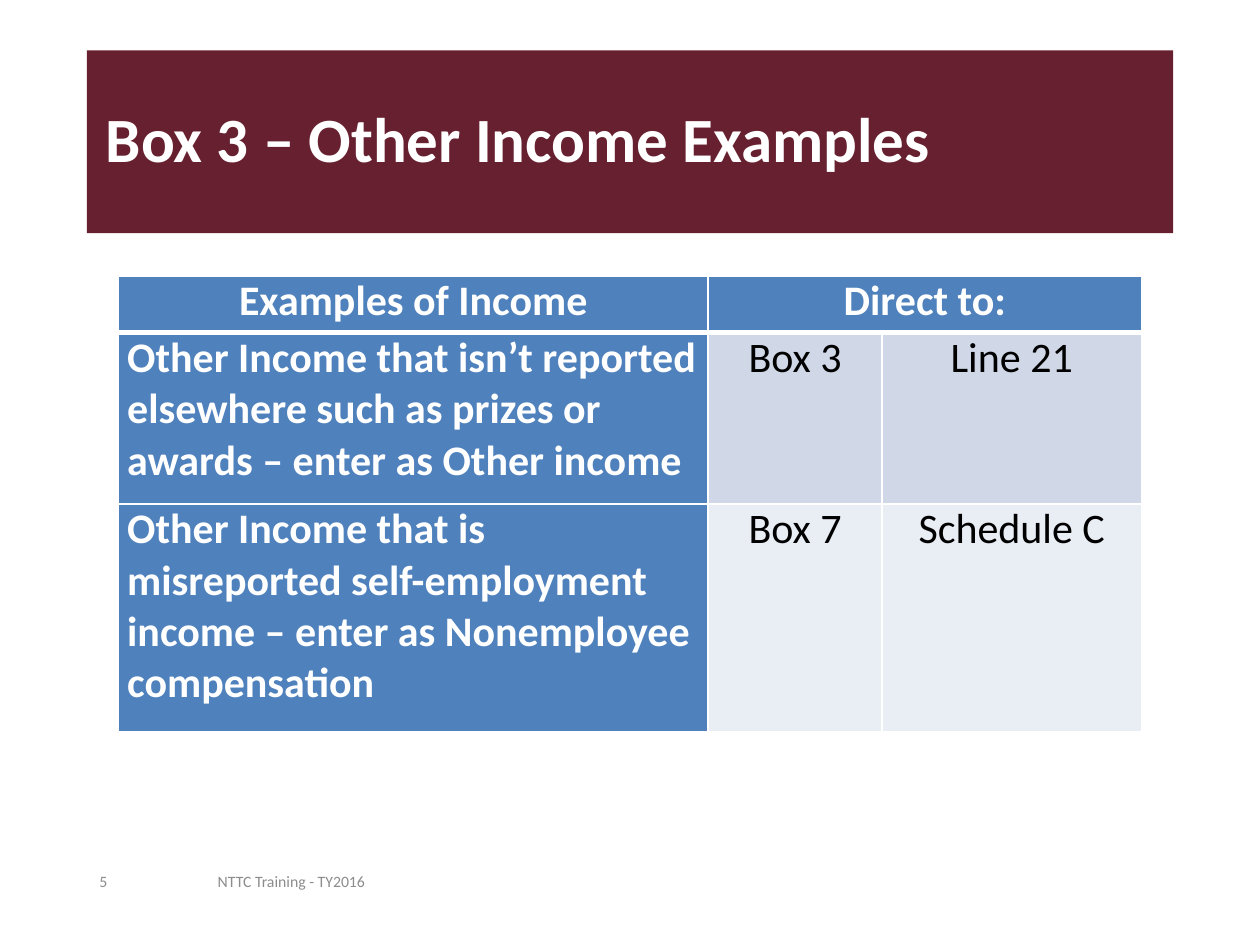
from pptx import Presentation
from pptx.dml.color import RGBColor
from pptx.enum.shapes import MSO_SHAPE
from pptx.enum.text import MSO_ANCHOR, PP_ALIGN
from pptx.oxml.ns import qn
from pptx.util import Inches, Pt
from lxml.etree import SubElement

WHITE = RGBColor(0xFF, 0xFF, 0xFF)
BLACK = RGBColor(0x00, 0x00, 0x00)
GRAY = RGBColor(0x8C, 0x8C, 0x8C)
MAROON = RGBColor(0x67, 0x20, 0x2F)
BLUE = RGBColor(0x4F, 0x81, 0xBD)
BAND_DARK = RGBColor(0xD0, 0xD8, 0xE8)
BAND_LIGHT = RGBColor(0xE9, 0xED, 0xF4)

FONT = "Calibri"
MARGIN = 0.69
COLUMN_WIDTHS = (4.68, 1.38, 2.06)
ROW_HEIGHTS = (0.45, 1.36, 1.81)
ROWS = (
    ("Examples of Income", "Direct to:", ""),
    ("Other Income that isn’t reported elsewhere such as prizes or awards – enter as Other income",
     "Box 3", "Line 21"),
    ("Other Income that is misreported self-employment income – enter as Nonemployee compensation",
     "Box 7", "Schedule C"),
)
BAND_FILLS = (BLUE, BAND_DARK, BAND_LIGHT)


def write_text(frame, text, size, color, bold=False, align=PP_ALIGN.LEFT):
    frame.word_wrap = True
    para = frame.paragraphs[0]
    para.text = text
    para.alignment = align
    para.font.name = FONT
    para.font.size = Pt(size)
    para.font.bold = bold
    para.font.color.rgb = color
    return para


def add_title(page, text):
    banner = page.shapes.add_shape(
        MSO_SHAPE.RECTANGLE, Inches(MARGIN), Inches(0.4), Inches(8.62), Inches(1.45))
    banner.shadow.inherit = False
    banner.fill.solid()
    banner.fill.fore_color.rgb = MAROON
    banner.line.fill.background()
    frame = banner.text_frame
    frame.margin_left = Inches(0.15)
    frame.vertical_anchor = MSO_ANCHOR.MIDDLE
    write_text(frame, text, 36, WHITE, bold=True).line_spacing = 0.9


def add_footer(page, text, left, width):
    box = page.shapes.add_textbox(Inches(left), Inches(6.79), Inches(width), Inches(0.4))
    box.text_frame.vertical_anchor = MSO_ANCHOR.MIDDLE
    write_text(box.text_frame, text, 9, GRAY)


def add_borders(cell, top, bottom):
    properties = cell._tc.get_or_add_tcPr()
    for side, points in (("L", 1), ("R", 1), ("T", top), ("B", bottom)):
        line = SubElement(properties, qn(f"a:ln{side}"), w=str(Pt(points)))
        fill = SubElement(line, qn("a:solidFill"))
        SubElement(fill, qn("a:srgbClr"), val=str(WHITE))


def style_cell(cell, text, row, column):
    header = row == 0
    label = header or column == 0
    add_borders(cell, top=3 if row == 1 else 1, bottom=3 if header else 1)
    cell.fill.solid()
    cell.fill.fore_color.rgb = BLUE if label else BAND_FILLS[row]
    cell.margin_left = cell.margin_right = Inches(0.07)
    cell.margin_top = cell.margin_bottom = 0
    align = PP_ALIGN.CENTER if header or column else PP_ALIGN.LEFT
    write_text(cell.text_frame, text, 24, WHITE if label else BLACK, label, align)


def add_income_table(page):
    table = page.shapes.add_table(
        len(ROWS), len(COLUMN_WIDTHS), Inches(0.94), Inches(2.19),
        Inches(sum(COLUMN_WIDTHS)), Inches(sum(ROW_HEIGHTS))).table
    table.first_col = True
    for column, width in zip(table.columns, COLUMN_WIDTHS):
        column.width = Inches(width)
    for row, height in zip(table.rows, ROW_HEIGHTS):
        row.height = Inches(height)
    for row, texts in enumerate(ROWS):
        for column, text in enumerate(texts):
            style_cell(table.cell(row, column), text, row, column)
    table.cell(0, 1).merge(table.cell(0, 2))


def main():
    deck = Presentation()
    deck.slide_width = Inches(10)
    deck.slide_height = Inches(7.5)
    page = deck.slides.add_slide(deck.slide_layouts[6])
    add_title(page, "Box 3 – Other Income Examples")
    add_footer(page, "NTTC Training - TY2016", 1.63, 3.77)
    add_footer(page, "5", MARGIN, 0.7)
    add_income_table(page)
    deck.save("out.pptx")


if __name__ == "__main__":
    main()
